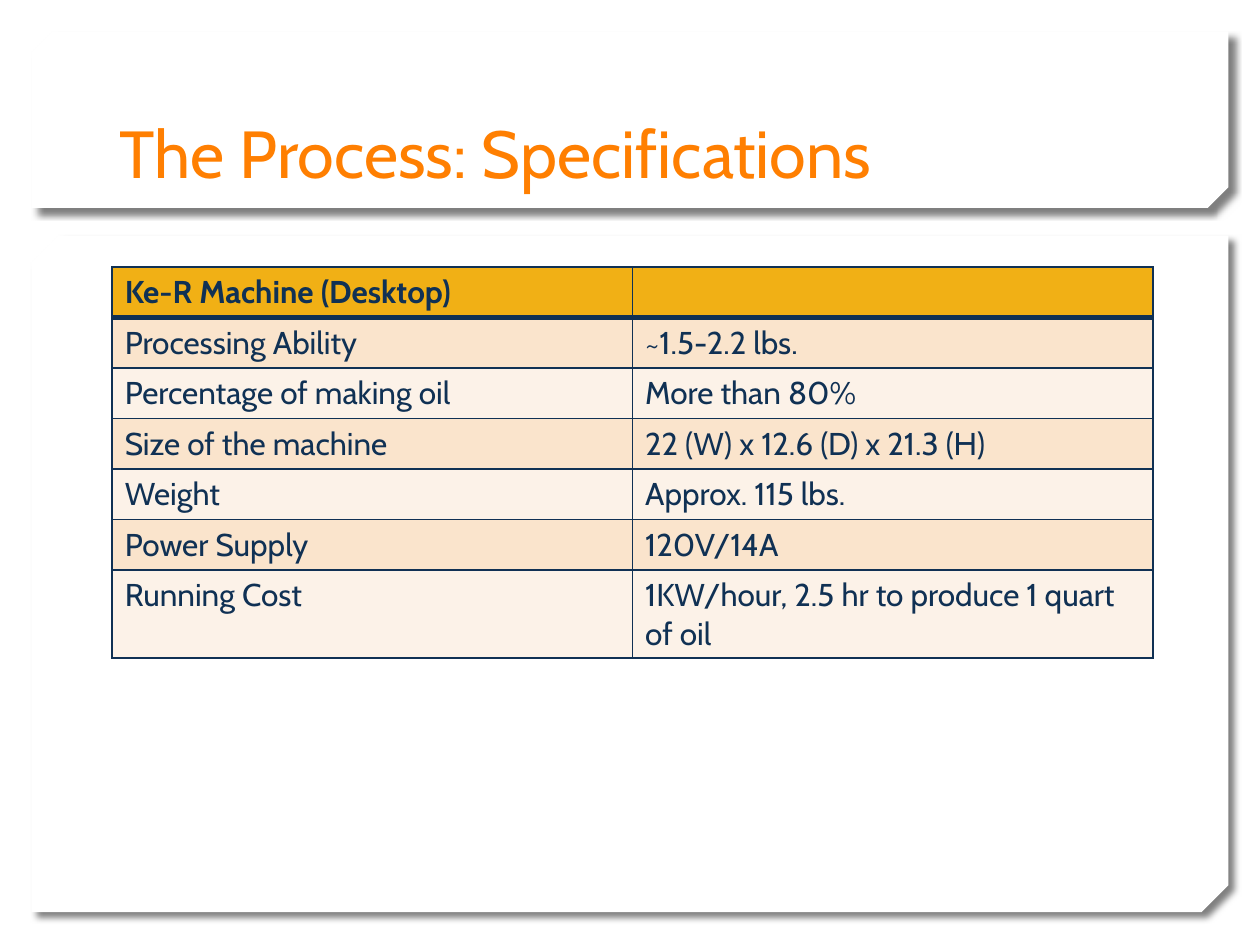
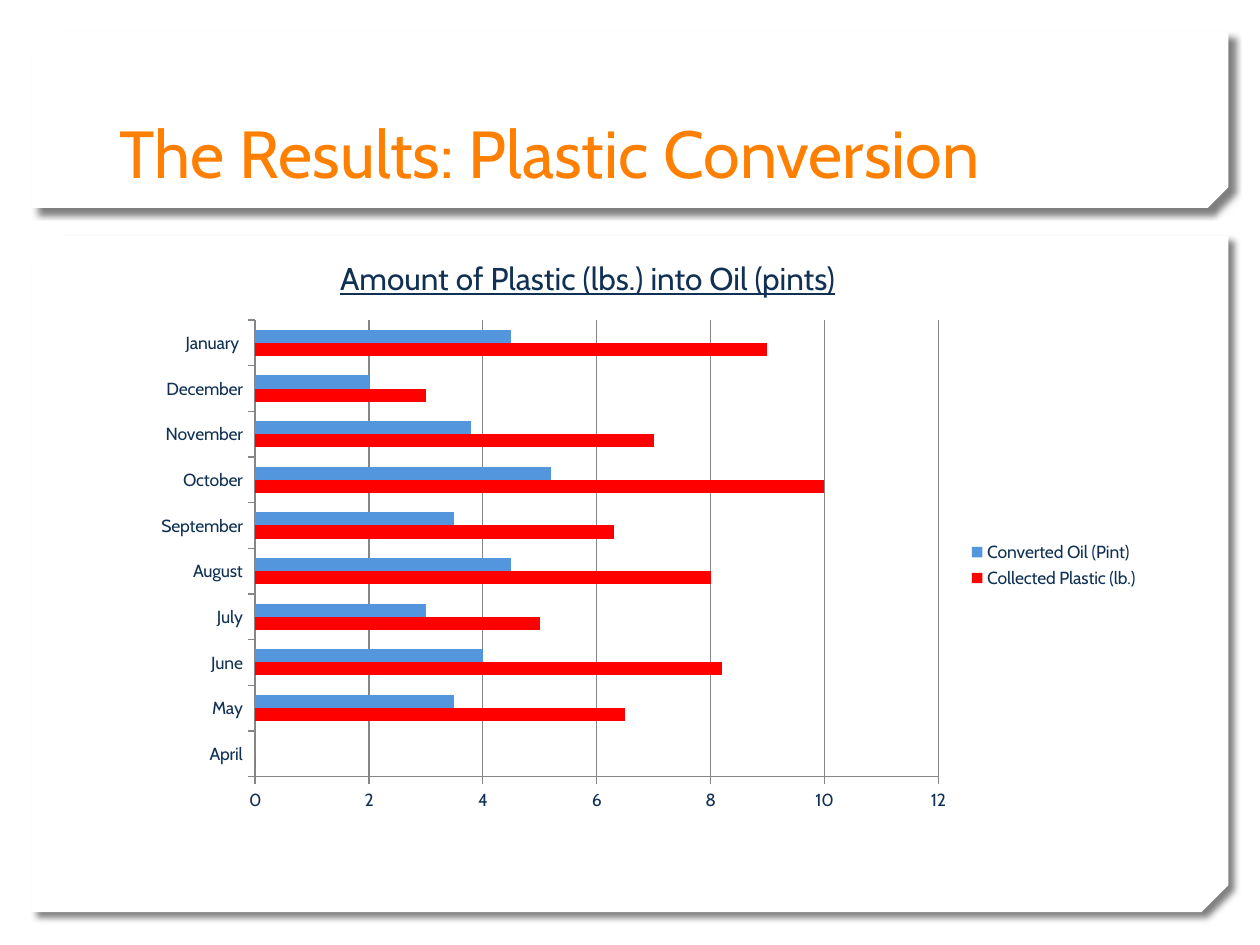
from lxml import etree
from pptx import Presentation, util as u
from pptx.chart.data import CategoryChartData
from pptx.dml.color import RGBColor
from pptx.enum import chart as ch, shapes, text
from pptx.oxml import parse_xml

PX = 9144  # EMU
FONT = "Cabin"
HUES = {"paper": "FFFFFF", "title": "FF7F01", "ink": "103154", "head": "F1B015",
        "odd": "FAE4CC", "even": "FCF2E8", "grid": "868686", "shade": "000000",
        "oil": "5396DE", "waste": "FF0000"}
NS = "http://schemas.openxmlformats.org/drawingml/2006/main"
BANDS = [((25, 187, 950, 537), 0.04), ((25, 25, 950, 140), 0.117)]
SPECS = [
    ("Ke-R Machine (Desktop)", ""),
    ("Processing Ability", "~1.5-2.2 lbs."),
    ("Percentage of making oil", "More than 80%"),
    ("Size of the machine", "22 (W) x 12.6 (D) x 21.3 (H)"),
    ("Weight", "Approx. 115 lbs."),
    ("Power Supply", "120V/14A"),
    ("Running Cost", "1KW/hour, 2.5 hr to produce 1 quart of oil"),
]
MONTHS = ["April", "May", "June", "July", "August", "September", "October",
          "November", "December", "January "]
YIELDS = [
    ("Collected Plastic (lb.)", "waste", [0, 6.5, 8.2, 5, 8, 6.3, 10, 7, 3, 9]),
    ("Converted Oil (Pint)", "oil", [0, 3.5, 4, 3, 4.5, 3.5, 5.2, 3.8, 2, 4.5]),
]


def emu(box):
    """Turn a box in px into EMU lengths."""
    return [u.Emu(n * PX) for n in box]


def put(obj, vals):
    """Set each attribute named in a dict of values."""
    for key, val in vals.items():
        setattr(obj, key, val)


def paint(fill, hue):
    """Fill solidly with a named hue."""
    fill.solid()
    fill.fore_color.rgb = RGBColor.from_string(HUES[hue])


def style(font, size, hue="ink", **more):
    """Set the deck font with its size, hue and further values."""
    put(font, {"name": FONT, "size": u.Pt(size), **more})
    font.color.rgb = RGBColor.from_string(HUES[hue])


def band(slide, box, snip):
    """Draw a white panel with two snipped corners and a soft shadow."""
    panel = slide.shapes.add_shape(shapes.MSO_SHAPE.SNIP_2_DIAG_RECTANGLE, *emu(box))
    panel.adjustments[0], panel.adjustments[1] = snip, 0
    paint(panel.fill, "paper")
    panel.line.fill.background()
    panel.shadow.inherit = False
    glow = panel._element.spPr.find(f"{{{NS}}}effectLst")
    glow.append(parse_xml(
        f'<a:outerShdw xmlns:a="{NS}" blurRad="{u.Pt(4)}" dist="{u.Pt(5)}" dir="2700000" '
        f'algn="tl" rotWithShape="0"><a:srgbClr val="{HUES["shade"]}">'
        '<a:alpha val="50000"/></a:srgbClr></a:outerShdw>'))


def label(slide, box, words, size, hue="ink", anchor="TOP", **more):
    """Add a wrapped line of text."""
    frame = slide.shapes.add_textbox(*emu(box)).text_frame
    put(frame, {"word_wrap": True, "vertical_anchor": text.MSO_ANCHOR[anchor], "text": words})
    style(frame.paragraphs[0].runs[0].font, size, hue, **more)


def page(deck, title):
    """Add a slide with both panels and its title."""
    slide = deck.slides.add_slide(deck.slide_layouts[6])
    paint(slide.background.fill, "paper")
    for box, snip in BANDS:
        band(slide, box, snip)
    label(slide, (85, 32, 829, 125), title, 38, "title", "BOTTOM")
    return slide


def edge(cell, widths):
    """Rule the four sides of a cell, given widths in points."""
    props = cell._tc.get_or_add_tcPr()
    for side, width in widths.items():
        line = etree.SubElement(props, f"{{{NS}}}ln{side}", w=str(u.Pt(width)))
        fill = etree.SubElement(line, f"{{{NS}}}solidFill")
        etree.SubElement(fill, f"{{{NS}}}srgbClr", val=HUES["ink"])


def grid(slide, box, rows):
    """Add a ruled table with a header row and banded body."""
    table = slide.shapes.add_table(len(rows), len(rows[0]), *emu(box)).table
    put(table, {"first_row": False, "horz_banding": False})
    for i, row in enumerate(rows):
        hue = "head" if i == 0 else "odd" if i % 2 else "even"
        for j, words in enumerate(row):
            cell = table.cell(i, j)
            edge(cell, {"L": 1, "R": 1, "T": 3 if i == 1 else 1, "B": 1 if i else 3})
            paint(cell.fill, hue)
            cell.text = words
            style(cell.text_frame.paragraphs[0].font, 18, bold=i == 0)
            for run in cell.text_frame.paragraphs[0].runs:
                style(run.font, 18, bold=i == 0)


def bars(slide, box, names, rows):
    """Add a clustered bar chart with a legend on the right."""
    data = CategoryChartData()
    data.categories = names
    for name, _, vals in rows:
        data.add_series(name, vals)
    kind = ch.XL_CHART_TYPE.BAR_CLUSTERED
    chart = slide.shapes.add_chart(kind, *emu(box), data).chart
    put(chart, {"has_title": False, "has_legend": True})
    style(chart.font, 10)
    put(chart.legend, {"position": ch.XL_LEGEND_POSITION.RIGHT, "include_in_layout": False})
    plot = chart.plots[0]
    put(plot, {"gap_width": 150, "overlap": 0, "vary_by_categories": False})
    for part, (_, hue, _) in zip(plot.series, rows):
        paint(part.format.fill, hue)
    put(chart.value_axis, {"minimum_scale": 0, "maximum_scale": 12, "major_unit": 2})
    for axis, lines in ((chart.category_axis, False), (chart.value_axis, True)):
        put(axis, {"has_major_gridlines": lines,
                   "major_tick_mark": ch.XL_TICK_MARK.OUTSIDE,
                   "minor_tick_mark": ch.XL_TICK_MARK.NONE})
        paint(axis.format.line.fill, "grid")
    paint(chart.value_axis.major_gridlines.format.line.fill, "grid")


def main():
    """Build both slides and save the deck."""
    deck = Presentation()
    put(deck, {"slide_width": u.Emu(1000 * PX), "slide_height": u.Emu(750 * PX)})
    grid(page(deck, "The Process: Specifications"), (89, 212, 826, 266), SPECS)
    slide = page(deck, "The Results: Plastic Conversion")
    bars(slide, (112, 246, 802, 405), MONTHS, YIELDS)
    label(slide, (260, 201, 452, 40), "Amount of Plastic (lbs.) into Oil (pints)", 18,
          underline=True)
    deck.save("out.pptx")


if __name__ == "__main__":
    main()
